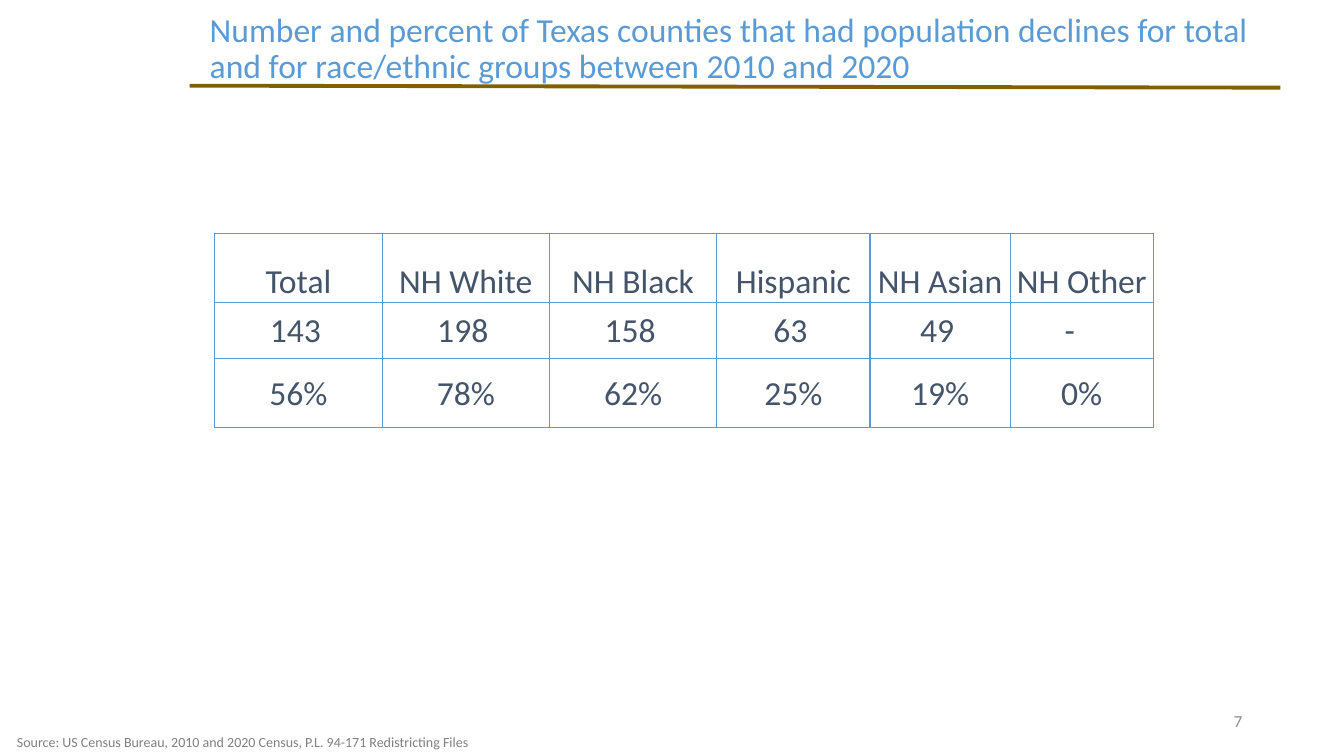
"""Build the slide on Texas counties with population declines, 2010 to 2020."""
from dataclasses import dataclass

from lxml.etree import SubElement
from pptx import Presentation
from pptx.dml.color import RGBColor
from pptx.enum.shapes import MSO_CONNECTOR as Connector
from pptx.enum.text import MSO_ANCHOR as Anchor, MSO_AUTO_SIZE as AutoSize, PP_ALIGN as Align
from pptx.oxml.ns import qn
from pptx.util import Inches, Pt

WIDTH, HEIGHT = 13.33, 7.5
FONT = "Calibri"
BLUE = RGBColor(0x5B, 0x9B, 0xD5)
SLATE = RGBColor(0x44, 0x54, 0x6A)
GOLD = RGBColor(0x80, 0x60, 0x00)
GRAY = RGBColor(0x80, 0x80, 0x80)
LIGHT_GRAY = RGBColor(0x8C, 0x8C, 0x8C)

COLUMN_WIDTHS = (1.66, 1.66, 1.66, 1.52, 1.39, 1.42)
GROUPS = ("Total", "NH White", "NH Black", "Hispanic", "NH Asian", "NH Other")
COUNTS = ("143", "198", "158", "63", "49", "-")
PERCENTS = ("56%", "78%", "62%", "25%", "19%", "0%")
CELL_MARGIN = 0.01
COUNT_MARGIN = 0.07
DASH_MARGIN = 0.25


@dataclass(frozen=True)
class Box:
    """Position and size in inches."""
    left: float
    top: float
    width: float
    height: float

    def lengths(self) -> tuple:
        """Return the four lengths in slide units."""
        return tuple(map(Inches, (self.left, self.top, self.width, self.height)))


@dataclass(frozen=True)
class TextStyle:
    """Look of the text in a frame."""
    size: float
    color: RGBColor
    align: Align = Align.LEFT
    anchor: Anchor = Anchor.TOP
    line_spacing: float = 1.0
    wrap: bool = True


@dataclass(frozen=True)
class TableRow:
    """One row of the table with its height and anchor."""
    values: tuple
    height: float
    anchor: Anchor = Anchor.MIDDLE
    margin_right: float = CELL_MARGIN


ROWS = (
    TableRow(GROUPS, 0.68, Anchor.BOTTOM),
    TableRow(COUNTS, 0.56, margin_right=COUNT_MARGIN),
    TableRow(PERCENTS, 0.68),
)


def set_values(target, values: dict) -> None:
    """Set each named attribute on the target."""
    for name, value in values.items():
        setattr(target, name, value)


def format_paragraph(paragraph, style: TextStyle) -> None:
    """Apply alignment, spacing and font to a paragraph."""
    set_values(paragraph, {"alignment": style.align, "line_spacing": style.line_spacing,
                           "space_before": Pt(0)})
    set_values(paragraph.font, {"name": FONT, "size": Pt(style.size), "bold": False})
    paragraph.font.color.rgb = style.color


def write_text(shape, text: str, style: TextStyle) -> None:
    """Fill a shape with one styled paragraph."""
    frame = shape.text_frame
    frame.text = text
    set_values(frame, {"auto_size": AutoSize.NONE, "word_wrap": style.wrap,
                       "vertical_anchor": style.anchor})
    format_paragraph(frame.paragraphs[0], style)


def add_title(slide, text: str, box: Box, style: TextStyle) -> None:
    """Move and format the title placeholder."""
    title = slide.shapes.title
    set_values(title, dict(zip(("left", "top", "width", "height"), box.lengths())))
    write_text(title, text, style)


def add_text(slide, text: str, box: Box, style: TextStyle) -> None:
    """Add a text box."""
    write_text(slide.shapes.add_textbox(*box.lengths()), text, style)


def add_rule(slide, start: tuple, end: tuple) -> None:
    """Draw the line under the title."""
    rule = slide.shapes.add_connector(Connector.STRAIGHT, *map(Inches, start + end))
    rule.line.color.rgb = GOLD
    rule.line.width = Pt(2.75)
    SubElement(rule._element.spPr, qn("a:effectLst"))


def add_borders(cell) -> None:
    """Outline a cell on all four sides."""
    properties = cell._tc.get_or_add_tcPr()
    for side in ("lnL", "lnR", "lnT", "lnB"):
        border = SubElement(properties, qn(f"a:{side}"), w=str(Pt(1)))
        fill = SubElement(border, qn("a:solidFill"))
        SubElement(fill, qn("a:srgbClr"), val=str(BLUE))


def add_county_table(slide, left: float, top: float) -> None:
    """Add the table of counties by group."""
    box = Box(left, top, sum(COLUMN_WIDTHS), sum(row.height for row in ROWS))
    table = slide.shapes.add_table(len(ROWS), len(COLUMN_WIDTHS), *box.lengths()).table
    set_values(table, {"first_row": False, "horz_banding": False})
    for column, width in zip(table.columns, COLUMN_WIDTHS):
        column.width = Inches(width)
    for table_row, row in zip(table.rows, ROWS):
        table_row.height = Inches(row.height)
        for cell, value in zip(table_row.cells, row.values):
            cell.text = value
            margin_right = DASH_MARGIN if value == "-" else row.margin_right
            set_values(cell, {"margin_left": Inches(CELL_MARGIN),
                              "margin_right": Inches(margin_right),
                              "margin_top": Inches(CELL_MARGIN), "margin_bottom": 0,
                              "vertical_anchor": row.anchor})
            format_paragraph(cell.text_frame.paragraphs[0], TextStyle(24, SLATE, Align.CENTER))
            add_borders(cell)
            cell.fill.background()


def main() -> None:
    """Build and save the presentation."""
    presentation = Presentation()
    set_values(presentation, {"slide_width": Inches(WIDTH), "slide_height": Inches(HEIGHT)})
    slide = presentation.slides.add_slide(presentation.slide_layouts[5])
    add_rule(slide, (1.88, 0.85), (12.7, 0.87))
    add_title(slide, "Number and percent of Texas counties that had population declines for total "
                     "and for race/ethnic groups between 2010 and 2020",
              Box(1.98, 0.08, 10.81, 1), TextStyle(24, BLUE, line_spacing=0.9))
    add_county_table(slide, 2.13, 2.32)
    add_text(slide, "7", Box(9.42, 6.95, 3, 0.4),
             TextStyle(12, LIGHT_GRAY, Align.RIGHT, Anchor.MIDDLE))
    add_text(slide, "Source: US Census Bureau, 2010 and 2020 Census, P.L. 94-171 Redistricting Files",
             Box(0.07, HEIGHT - 0.27, 4.77, 0.27), TextStyle(10, GRAY, wrap=False))
    presentation.save("out.pptx")


if __name__ == "__main__":
    main()
